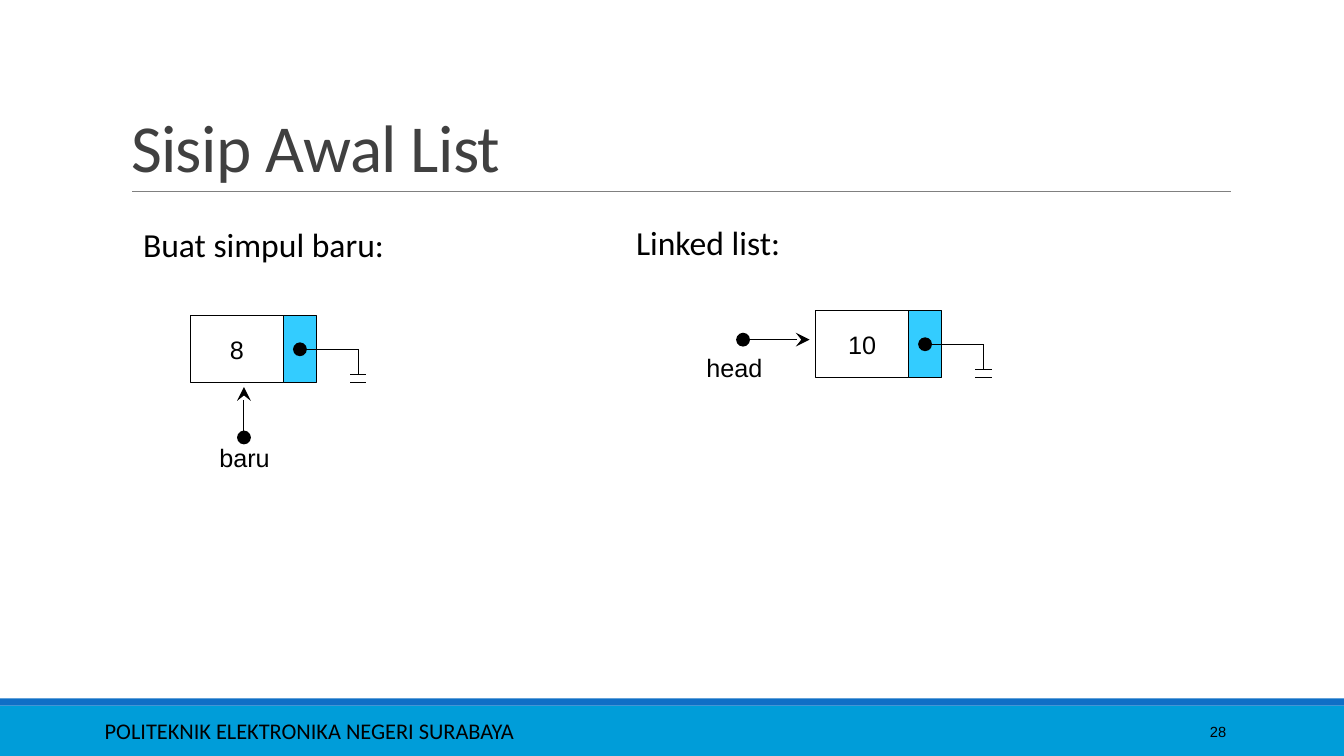
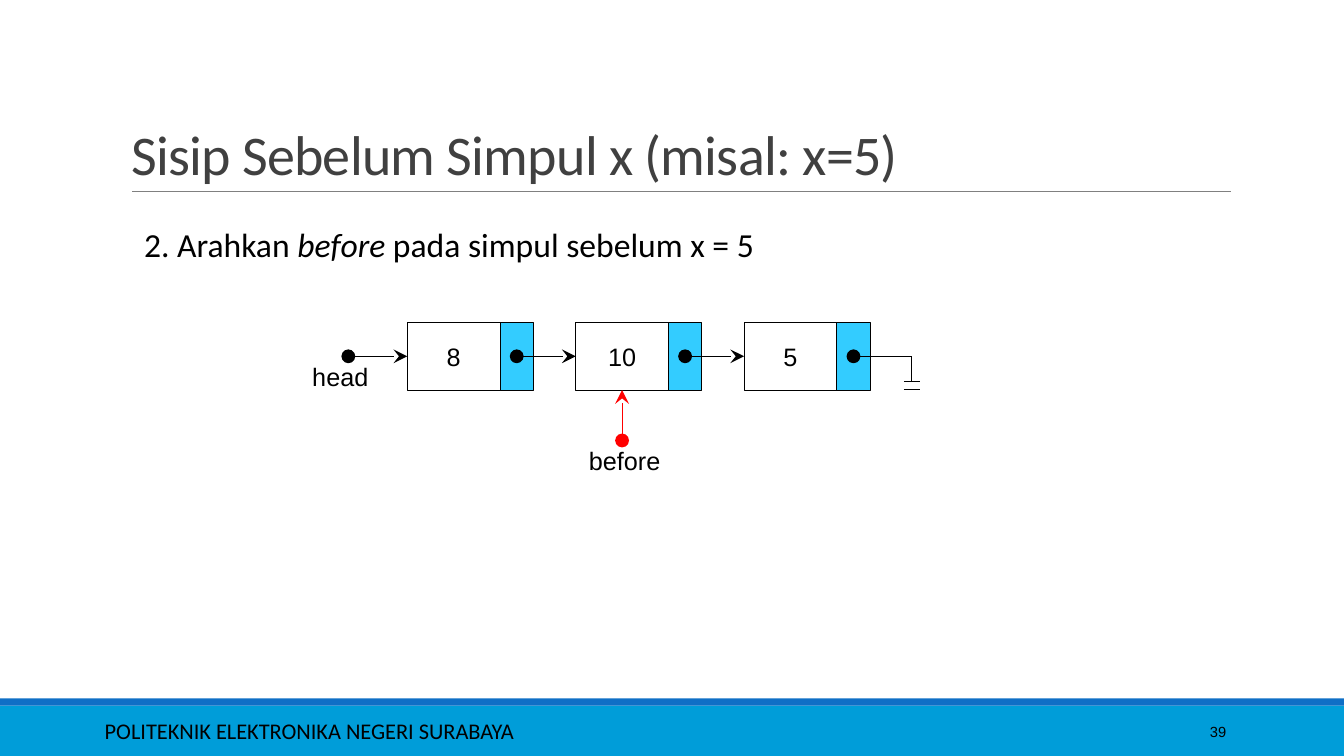
from lxml import etree
from pptx import Presentation
from pptx.dml.color import RGBColor
from pptx.enum.shapes import MSO_CONNECTOR, MSO_SHAPE
from pptx.enum.text import MSO_ANCHOR, PP_ALIGN
from pptx.oxml.ns import qn
from pptx.util import Inches, Pt

RECTANGLE = MSO_SHAPE.RECTANGLE
STRAIGHT = MSO_CONNECTOR.STRAIGHT
TOP, MIDDLE, BOTTOM = MSO_ANCHOR.TOP, MSO_ANCHOR.MIDDLE, MSO_ANCHOR.BOTTOM
LEFT, CENTER, RIGHT = PP_ALIGN.LEFT, PP_ALIGN.CENTER, PP_ALIGN.RIGHT
LEFT_SIDE, BOTTOM_SIDE = 1, 2

BLACK = RGBColor(0x00, 0x00, 0x00)
RED = RGBColor(0xFF, 0x00, 0x00)
GRAY = RGBColor(0x80, 0x80, 0x80)
TITLE_GRAY = RGBColor(0x40, 0x40, 0x40)
BAND_BLUE = RGBColor(0x00, 0x9D, 0xD9)
STRIPE_BLUE = RGBColor(0x0F, 0x6F, 0xC6)
POINTER_BLUE = RGBColor(0x33, 0xCC, 0xFF)

HEADING_FONT, LABEL_FONT = "Calibri", "Arial"
FOOTER = "POLITEKNIK ELEKTRONIKA NEGERI SURABAYA"

VALUE_WIDTH, POINTER_WIDTH, NODE_HEIGHT = 0.92, 0.33, 0.67
POINTER_CENTER = VALUE_WIDTH + POINTER_WIDTH / 2
NODE_STEP = 1.67
LINK_LENGTH = 0.58
ARROW_LENGTH = 0.5
LABEL_WIDTH, LABEL_HEIGHT = 1.17, 0.4


def style_font(font, name, size, color=BLACK):
    """Set the typeface, size and colour of a font."""
    font.name = name
    font.size = Pt(size)
    font.color.rgb = color


def add_text(slide, text, left, top, width, height, name, size,
             align=LEFT, anchor=TOP):
    """Add a wrapped text box and return its paragraph."""
    box = slide.shapes.add_textbox(
        Inches(left), Inches(top), Inches(width), Inches(height))
    frame = box.text_frame
    frame.word_wrap = True
    frame.vertical_anchor = anchor
    frame.text = text
    para = frame.paragraphs[0]
    para.alignment = align
    for span in para.runs:
        style_font(span.font, name, size)
    return para


def add_rectangle(slide, left, top, width, height, fill=None, outlined=False):
    """Add a rectangle with an optional fill and outline."""
    box = slide.shapes.add_shape(
        RECTANGLE, Inches(left), Inches(top), Inches(width), Inches(height))
    box.shadow.inherit = False
    if fill is None:
        box.fill.background()
    else:
        box.fill.solid()
        box.fill.fore_color.rgb = fill
    if outlined:
        box.line.color.rgb = BLACK
        box.line.width = Pt(0.75)
    else:
        box.line.fill.background()
    return box


def add_line(slide, start, end, color=BLACK, width=0.75, dot=False, arrow=False):
    """Add a straight line, with a dot at its start or an arrow at its end."""
    line = slide.shapes.add_connector(
        STRAIGHT, *(Inches(value) for value in (*start, *end)))
    line.line.color.rgb = color
    line.line.width = Pt(width)
    outline = line.line._get_or_add_ln()
    for wanted, tag, kind in ((dot, "a:headEnd", "oval"),
                              (arrow, "a:tailEnd", "stealth")):
        if wanted:
            etree.SubElement(outline, qn(tag), type=kind, w="lg", len="lg")
    etree.SubElement(line._element.spPr, qn("a:effectLst"))
    return line


def add_arrow(slide, start, end, color=BLACK):
    """Add a pointer arrow that starts with a dot."""
    return add_line(slide, start, end, color, dot=True, arrow=True)


def add_node(slide, value, left, top):
    """Add a list node and return the box that holds its value."""
    box = add_rectangle(slide, left, top, VALUE_WIDTH, NODE_HEIGHT, outlined=True)
    frame = box.text_frame
    frame.text = value
    frame.vertical_anchor = MIDDLE
    para = frame.paragraphs[0]
    para.alignment = CENTER
    style_font(para.runs[0].font, LABEL_FONT, 18)
    add_rectangle(slide, left + VALUE_WIDTH, top, POINTER_WIDTH, NODE_HEIGHT,
                  POINTER_BLUE, outlined=True)
    return box


def add_null(slide, left, top):
    """Add the null link of the node at the given corner."""
    start = left + POINTER_CENTER
    end = start + LINK_LENGTH
    middle = top + NODE_HEIGHT / 2
    ground = middle + 0.25
    add_line(slide, (start, middle), (end, middle), dot=True)
    add_line(slide, (end, middle), (end, ground))
    for level in (ground, ground + 0.08):
        add_line(slide, (end - 0.08, level), (end + 0.08, level))


def add_label(slide, text, left, top):
    """Add the name of a pointer."""
    add_text(slide, text, left, top, LABEL_WIDTH, LABEL_HEIGHT,
             LABEL_FONT, 18, CENTER)


def add_heading(slide, text, left, top, width):
    """Add a line of body text."""
    return add_text(slide, text, left, top, width, 0.5, HEADING_FONT, 24)


def add_page(deck, title, size, number):
    """Add a slide with the shared title, rule and footer."""
    page = deck.slides.add_slide(deck.slide_layouts[5])
    add_rectangle(page, 0, 7, 13.33, 0.5, BAND_BLUE)
    add_rectangle(page, 0, 6.93, 13.33, 0.07, STRIPE_BLUE)
    add_line(page, (1.31, 1.9), (12.21, 1.9), GRAY, 0.5)
    add_text(page, FOOTER, 0.94, 7.05, 8.41, 0.4, HEADING_FONT, 16, anchor=MIDDLE)
    add_text(page, number, 10.83, 7.06, 1.43, 0.4, LABEL_FONT, 10.5, RIGHT, MIDDLE)
    box = page.shapes.title
    box.left, box.top = Inches(1.2), Inches(0.31)
    box.width, box.height = Inches(11), Inches(1.59)
    frame = box.text_frame
    frame.text = title
    frame.vertical_anchor = BOTTOM
    para = frame.paragraphs[0]
    para.alignment = LEFT
    para.line_spacing = 0.85
    span = para.runs[0]
    style_font(span.font, HEADING_FONT, size, TITLE_GRAY)
    span.font._element.set("spc", "-50")
    return page


def add_insert_first(deck):
    """Build the slide about inserting at the start of the list."""
    page = add_page(deck, "Sisip Awal List", 48, "28")
    add_heading(page, "Buat simpul baru:", 1.32, 2.17, 2.79)
    add_heading(page, "Linked list:", 6.21, 2.15, 2.58)
    for value, left, top in (("8", 1.89, 3.13), ("10", 8.09, 3.08)):
        add_node(page, value, left, top)
        add_null(page, left, top)
    add_arrow(page, (2.42, 4.34), (2.42, 4.34 - ARROW_LENGTH))
    add_label(page, "baru", 1.84, 4.34)
    add_arrow(page, (7.37, 3.37), (8.03, 3.37))
    add_label(page, "head", 6.7, 3.45)


def add_insert_before(deck):
    """Build the slide about inserting before a node."""
    page = add_page(deck, "Sisip Sebelum Simpul x (misal: x=5)", 40, "39")
    para = add_heading(page, "2. Arahkan ", 1.33, 2.17, 6.41)
    for text, italic in (("before ", True), ("pada simpul sebelum x = 5", False)):
        span = para.add_run()
        span.text = text
        style_font(span.font, HEADING_FONT, 24)
        span.font.italic = italic
    first, top = 4.04, 3.2
    middle, bottom = top + NODE_HEIGHT / 2, top + NODE_HEIGHT
    lefts = [first + index * NODE_STEP for index in range(3)]
    boxes = [add_node(page, value, left, top)
             for value, left in zip(("8", "10", "5"), lefts)]
    starts = [left + POINTER_CENTER - NODE_STEP for left in lefts]
    for box, start, left in zip(boxes, starts, lefts):
        arrow = add_arrow(page, (start, middle), (left, middle))
        arrow.end_connect(box, LEFT_SIDE)
    add_null(page, lefts[-1], top)
    add_label(page, "head", 2.79, middle)
    target = lefts[1] + VALUE_WIDTH / 2
    arrow = add_arrow(page, (target, bottom + ARROW_LENGTH), (target, bottom), RED)
    arrow.end_connect(boxes[1], BOTTOM_SIDE)
    add_label(page, "before", 5.61, bottom + ARROW_LENGTH)


def main():
    """Build and save the deck."""
    deck = Presentation()
    deck.slide_width, deck.slide_height = Inches(13.33), Inches(7.5)
    add_insert_first(deck)
    add_insert_before(deck)
    deck.save("out.pptx")


if __name__ == "__main__":
    main()
